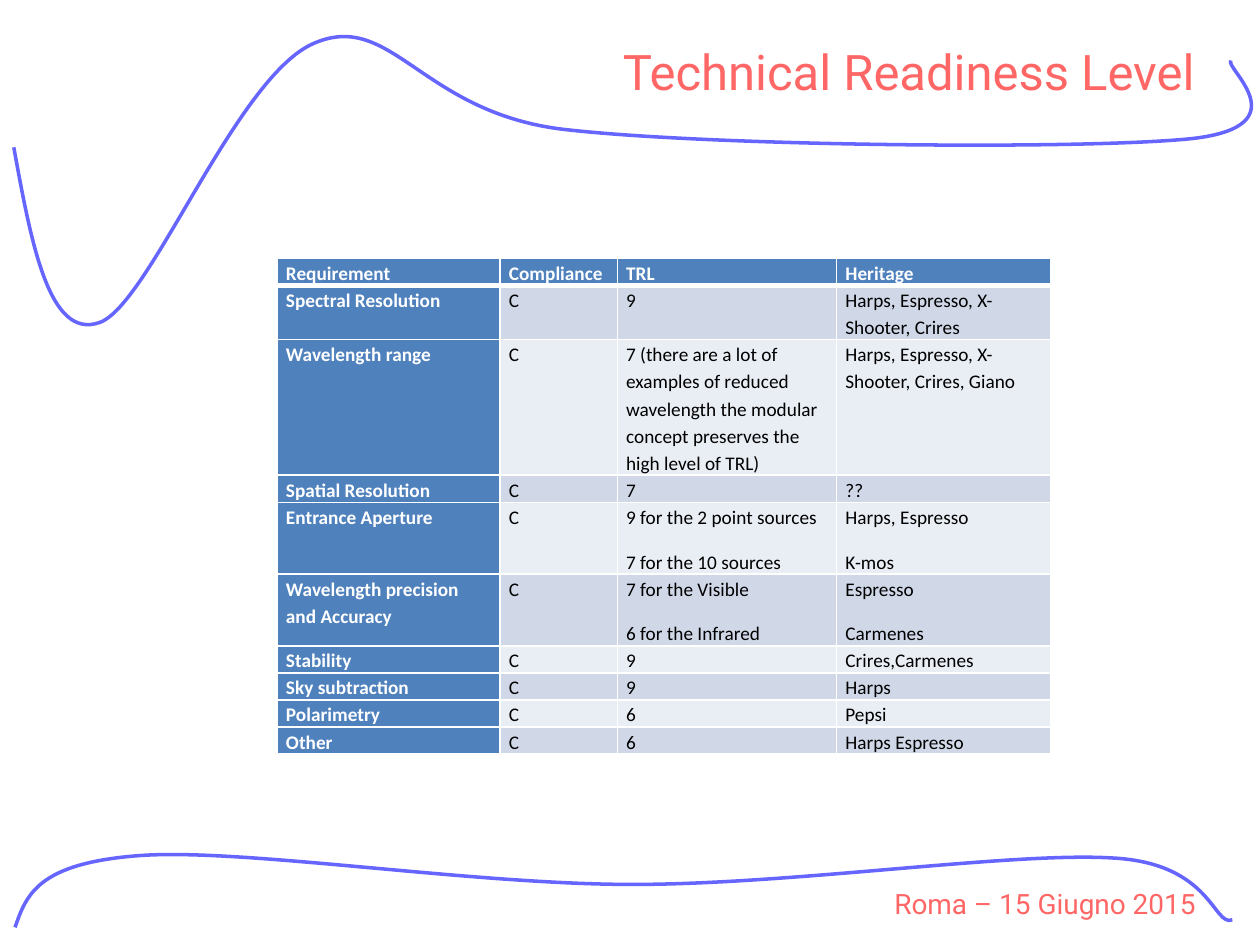
from pptx import Presentation
from pptx.dml.color import RGBColor
from pptx.enum import text
from pptx.oxml import ns
from pptx.oxml.xmlchemy import OxmlElement
from pptx.util import Pt

CORAL = RGBColor(0xFF, 0x66, 0x66)
VIOLET = RGBColor(0x66, 0x66, 0xFF)
BLUE = RGBColor(0x4F, 0x81, 0xBD)
BANDS = RGBColor(0xD0, 0xD8, 0xE8), RGBColor(0xE9, 0xED, 0xF4)
WHITE = RGBColor(0xFF, 0xFF, 0xFF)
BLACK = RGBColor(0, 0, 0)

TITLE = "Technical Readiness Level"
FOOTER = "Roma – 15 Giugno 2015"
# Text of each row, and the number of lines it needs
ROWS = [
    (("Requirement", "Compliance", "TRL", "Heritage"), 1),
    (("Spectral Resolution", "C", "9", "Harps, Espresso, X-Shooter, Crires"), 2),
    (("Wavelength range", "C",
      "7 (there are a lot of examples of reduced wavelength the modular "
      "concept preserves the high level of TRL)",
      "Harps, Espresso, X-Shooter, Crires, Giano"), 5),
    (("Spatial Resolution", "C", "7", "??"), 1),
    (("Entrance Aperture", "C", "9 for the 2 point sources\n7 for the 10 sources",
      "Harps, Espresso\nK-mos"), 2),
    (("Wavelength precision and Accuracy", "C",
      "7 for the Visible\n6 for the Infrared", "Espresso\nCarmenes"), 2),
    (("Stability", "C", "9", "Crires,Carmenes"), 1),
    (("Sky subtraction", "C", "9", "Harps"), 1),
    (("Polarimetry", "C", "6", "Pepsi"), 1),
    (("Other", "C", "6", "Harps Espresso"), 1),
]
COLUMN_WIDTHS = 127.4, 67, 125.3, 122.4
LINE_HEIGHT, PARA_GAP = 15.5, 10

# Start point, then two control points and an end point for each curve
TOP_WAVE = [
    (7.9, 84.2),
    (18, 139.7), (28.1, 194.4), (56.9, 184.3),
    (85.7, 174.2), (135.4, 42.5), (180, 24.5),
    (224.6, 5.8), (241.2, 65.5), (324.7, 74.2),
    (408.2, 83.5), (617.8, 85.7), (681.1, 79.2),
    (744.5, 72), (699.1, 38.2), (703.4, 34.6),
]
BOTTOM_WAVE = [
    (8.6, 529.9),
    (15.1, 511.2), (21.6, 493.2), (79.9, 488.9),
    (139, 484.6), (268.6, 505.4), (361.4, 505.4),
    (453.6, 505.4), (578.2, 486.7), (635.8, 490.3),
    (692.6, 493.2), (693.4, 529.9), (704.2, 525.6),
]


def write(frame, content, *, font, size, color, bold=False, align=None,
          line_spacing=None, gap=None):
    frame.text = content
    for para in frame.paragraphs:
        para.alignment = align
        para.line_spacing = line_spacing
        if gap is not None:
            para.space_after = Pt(gap)
        for span in para.runs:
            span.font.name = font
            span.font.size = Pt(size)
            span.font.bold = bold
            span.font.color.rgb = color


def add_wave(page, points, steps=40):
    """Fit the shape's box to the sampled wave, then draw it with true curves."""
    curves = [points[i:i + 4] for i in range(0, len(points) - 1, 3)]
    samples = []
    for curve in curves:
        for step in range(1, steps + 1):
            t = step / steps
            weights = (1 - t) ** 3, 3 * t * (1 - t) ** 2, 3 * t * t * (1 - t), t ** 3
            samples.append([Pt(sum(w * p[axis] for w, p in zip(weights, curve)))
                            for axis in (0, 1)])
    builder = page.shapes.build_freeform(Pt(points[0][0]), Pt(points[0][1]))
    builder.add_line_segments(samples, close=False)
    wave = builder.convert_to_shape()
    outline = wave._element.find(".//" + ns.qn("a:path"))
    for segment in outline.findall(ns.qn("a:lnTo")):
        outline.remove(segment)
    for curve in curves:
        segment = OxmlElement("a:cubicBezTo")
        for x, y in curve[1:]:
            point = OxmlElement("a:pt")
            point.set("x", str(Pt(x) - wave.left))
            point.set("y", str(Pt(y) - wave.top))
            segment.append(point)
        outline.append(segment)
    wave.shadow.inherit = False
    wave.fill.background()
    wave.line.color.rgb = VIOLET
    wave.line.width = Pt(2)


def set_borders(cell, **widths):
    properties = cell._tc.get_or_add_tcPr()
    for position, side in enumerate("LRTB"):
        border = OxmlElement("a:ln" + side)
        border.set("w", str(Pt(widths.get(side, 1))))
        fill = OxmlElement("a:solidFill")
        color = OxmlElement("a:srgbClr")
        color.set("val", str(WHITE))
        fill.append(color)
        border.append(fill)
        properties.insert(position, border)


def add_requirements(page):
    heights = [lines * LINE_HEIGHT + PARA_GAP * max(c.count("\n") for c in cells)
               for cells, lines in ROWS]
    table = page.shapes.add_table(
        len(ROWS), len(COLUMN_WIDTHS), Pt(158.4), Pt(147.6),
        Pt(sum(COLUMN_WIDTHS)), Pt(sum(heights))).table
    table.first_col = True
    for column, width in zip(table.columns, COLUMN_WIDTHS):
        column.width = Pt(width)
    for r, (cells, _) in enumerate(ROWS):
        table.rows[r].height = Pt(heights[r])
        for c, content in enumerate(cells):
            cell = table.cell(r, c)
            heading = r == 0 or c == 0
            cell.margin_left = cell.margin_right = Pt(5.04)
            cell.margin_top = cell.margin_bottom = 0
            cell.fill.solid()
            cell.fill.fore_color.rgb = BLUE if heading else BANDS[(r - 1) % 2]
            set_borders(cell, T=3 if r == 1 else 1, B=3 if r == 0 else 1)
            write(cell.text_frame, content, font="Calibri", size=11, bold=heading,
                  color=WHITE if heading else BLACK, line_spacing=1.15, gap=PARA_GAP)


def main():
    deck = Presentation()
    deck.slide_width, deck.slide_height = Pt(720), Pt(540)
    page = deck.slides.add_slide(deck.slide_layouts[5])

    add_wave(page, TOP_WAVE)
    add_wave(page, BOTTOM_WAVE)

    footer = page.shapes.add_textbox(Pt(504), Pt(503.3), Pt(190.8), Pt(26.6))
    footer.text_frame.word_wrap = False
    footer.text_frame.auto_size = text.MSO_AUTO_SIZE.SHAPE_TO_FIT_TEXT
    write(footer.text_frame, FOOTER, font="Roboto", size=16, color=CORAL)

    title = page.shapes.title
    title.left, title.top, title.width, title.height = (
        Pt(264.2), Pt(15.1), Pt(425.5), Pt(51.1))
    title.text_frame.auto_size = text.MSO_AUTO_SIZE.NONE
    title.text_frame.vertical_anchor = text.MSO_ANCHOR.MIDDLE
    write(title.text_frame, TITLE, font="Roboto", size=28, color=CORAL,
          align=text.PP_ALIGN.RIGHT)

    add_requirements(page)
    deck.save("out.pptx")


if __name__ == "__main__":
    main()
